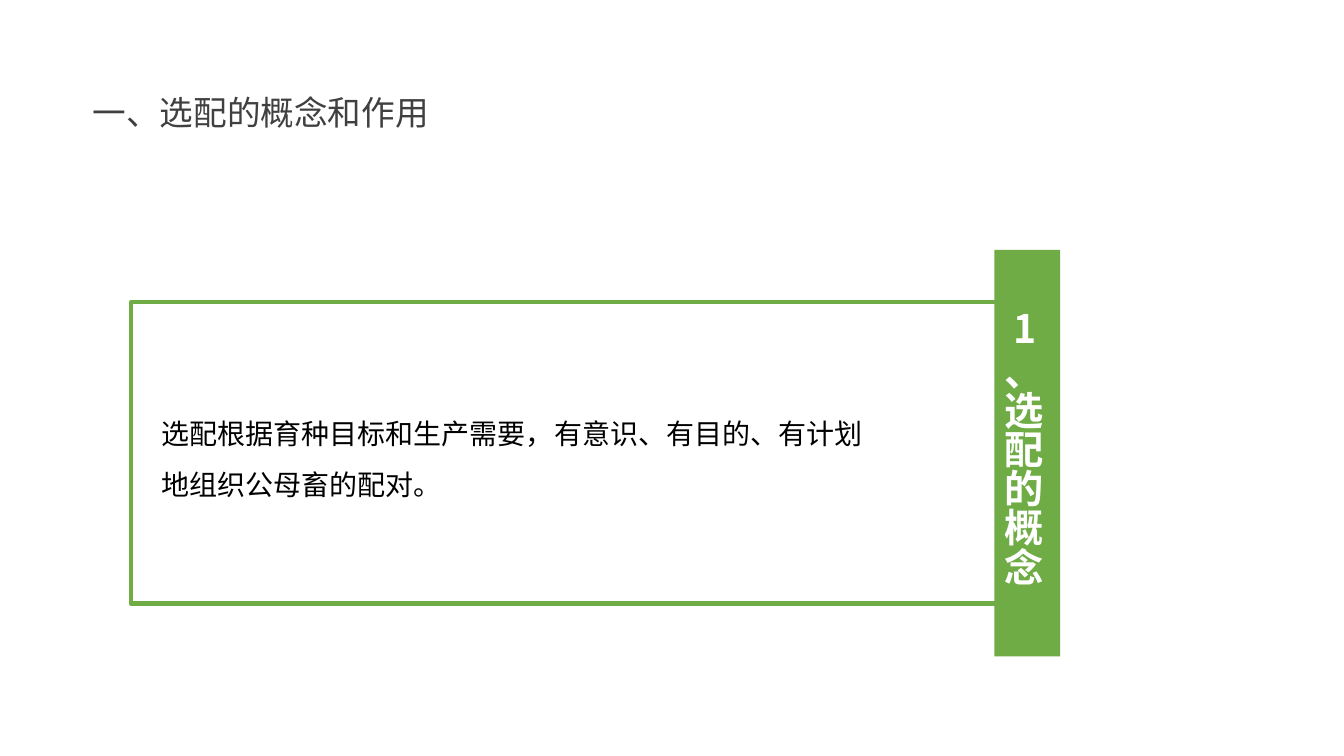
from dataclasses import dataclass
from typing import Optional

from pptx import Presentation
from pptx import util as u
from pptx.dml.color import RGBColor
from pptx.enum import shapes, text
from pptx.oxml.ns import qn

GREEN = RGBColor(0x6F, 0xAC, 0x46)
GREY = RGBColor(0x40, 0x40, 0x40)
BLACK = RGBColor(0, 0, 0)
WHITE = RGBColor(0xFF, 0xFF, 0xFF)
FONT = "Noto Sans CJK SC"


@dataclass(frozen=True)
class Box:
    left: float
    top: float
    width: float
    height: float

    def lengths(self) -> tuple:
        return tuple(u.Cm(v) for v in (self.left, self.top, self.width, self.height))


@dataclass(frozen=True)
class Panel:
    box: Box
    fill: Optional[RGBColor] = None
    line: Optional[RGBColor] = None


@dataclass(frozen=True)
class Label:
    words: str
    box: Box
    size: int
    color: RGBColor
    bold: bool = False
    align: text.PP_ALIGN = text.PP_ALIGN.LEFT
    anchor: text.MSO_ANCHOR = text.MSO_ANCHOR.TOP
    spacing: Optional[float] = None


PANELS = [
    Panel(Box(25.06, 6.3, 1.66, 10.24), fill=GREEN),
    Panel(Box(3.3, 7.62, 22.81, 7.59), line=GREEN),
]

LABELS = [
    Label("一、选配的概念和作用", Box(2.34, 0.98, 29.21, 3.68), 24, GREY,
          anchor=text.MSO_ANCHOR.MIDDLE),
    Label("1", Box(25.5, 7.67, 0.69, 1.43), 28, WHITE, bold=True,
          align=text.PP_ALIGN.CENTER),
    Label("、选配的概念", Box(25.32, 8.94, 1.02, 5.93), 28, WHITE, bold=True,
          align=text.PP_ALIGN.JUSTIFY, spacing=28),
    Label("选配根据育种目标和生产需要，有意识、有目的、有计划地组织公母畜的配对。",
          Box(4.07, 10.06, 17.68, 2.6), 20, BLACK, spacing=36.5),
]


def add_panel(s, panel: Panel) -> None:
    sp = s.shapes.add_shape(shapes.MSO_SHAPE.RECTANGLE, *panel.box.lengths())
    sp.shadow.inherit = False
    if panel.fill is None:
        sp.fill.background()
    else:
        sp.fill.solid()
        sp.fill.fore_color.rgb = panel.fill
    if panel.line is None:
        sp.line.fill.background()
    else:
        sp.line.color.rgb = panel.line
        sp.line.width = u.Pt(3)


def add_label(s, label: Label) -> None:
    tf = s.shapes.add_textbox(*label.box.lengths()).text_frame
    tf.word_wrap = True
    tf.vertical_anchor = label.anchor
    tf.margin_left = tf.margin_top = tf.margin_right = tf.margin_bottom = 0
    p = tf.paragraphs[0]
    p.alignment = label.align
    if label.spacing is not None:
        p.line_spacing = u.Pt(label.spacing)
    r = p.add_run()
    r.text = label.words
    r.font.name = FONT
    r.font.size = u.Pt(label.size)
    r.font.bold = label.bold
    r.font.color.rgb = label.color
    east_asian = r.font._element.makeelement(qn("a:ea"), {"typeface": FONT})
    r.font._element.find(qn("a:latin")).addnext(east_asian)


def main() -> None:
    prs = Presentation()
    prs.slide_width = u.Cm(33.87)
    prs.slide_height = u.Cm(19.05)
    s = prs.slides.add_slide(prs.slide_layouts[6])
    for panel in PANELS:
        add_panel(s, panel)
    for label in LABELS:
        add_label(s, label)
    prs.save("out.pptx")


if __name__ == "__main__":
    main()
